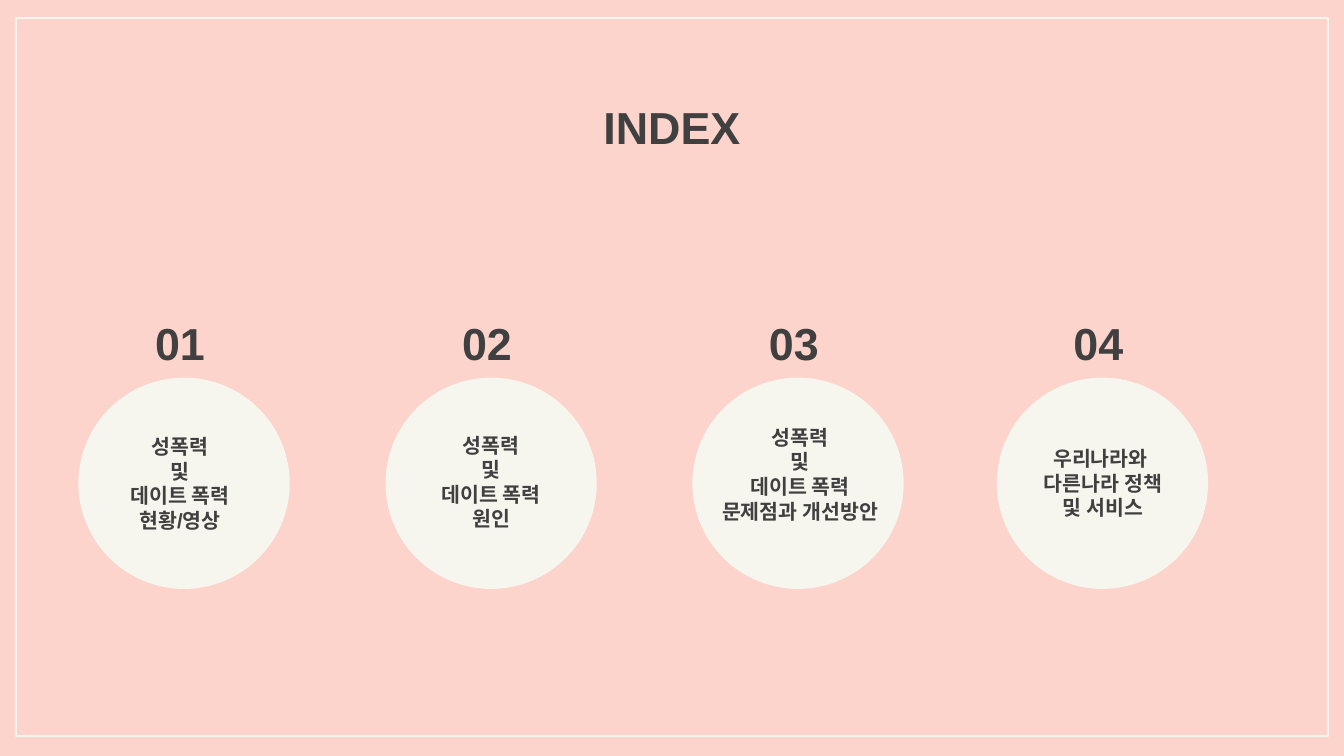
from pptx import Presentation
from pptx.dml.color import RGBColor
from pptx.enum import shapes, text
from pptx.util import Pt

PINK = RGBColor(0xFC, 0xD4, 0xCC)
CREAM = RGBColor(0xF6, 0xF5, 0xEE)
CHARCOAL = RGBColor(0x40, 0x40, 0x40)

CIRCLE_TOP, CIRCLE_SIZE = 202.3, 113.2
NUMBER_TOP, NUMBER_INDENT = 165.6, 34

# Circle left, label box (left, top, width, height), label paragraphs
TOPICS = [
    (42, (59, 229, 75, 62.6), ["성폭력", "및", "데이트 폭력 현황/영상"]),
    (206.5, (224.6, 228.2, 77, 60.5), ["성폭력", "및", "데이트 폭력", "원인"]),
    (370.9, (372.2, 223.9, 113, 60.5),
     ["성폭력", "및", "데이트 폭력", "문제점과 개선방안"]),
    (534, (545.8, 235.4, 90, 47.5), ["우리나라와 ", "다른나라 정책 및 서비스"]),
]


def write(frame, lines, size=11, align=text.PP_ALIGN.CENTER, font="Arial",
          color=CHARCOAL, bold=True):
    """Fill a text frame with one paragraph for each line."""
    for index, line in enumerate(lines):
        para = frame.add_paragraph() if index else frame.paragraphs[0]
        para.alignment = align
        span = para.add_run()
        span.text = line
        span.font.name = font
        span.font.size = Pt(size)
        span.font.bold = bold
        span.font.color.rgb = color


class IndexPage:
    """Holds the style and the slide being built."""

    def __init__(self, deck):
        self.page = deck.slides.add_slide(deck.slide_layouts[6])
        self.page.background.fill.solid()
        self.page.background.fill.fore_color.rgb = PINK

    def frame(self, left, top, width, height):
        box = self.page.shapes.add_shape(
            shapes.MSO_SHAPE.RECTANGLE, Pt(left), Pt(top), Pt(width), Pt(height))
        box.shadow.inherit = False
        box.fill.background()
        box.line.color.rgb = CREAM
        box.line.width = Pt(1)

    def circle(self, left, top, size):
        disc = self.page.shapes.add_shape(
            shapes.MSO_SHAPE.OVAL, Pt(left), Pt(top), Pt(size), Pt(size))
        disc.shadow.inherit = False
        disc.fill.solid()
        disc.fill.fore_color.rgb = CREAM
        disc.line.fill.background()

    def text(self, left, top, width, height, lines, **style):
        box = self.page.shapes.add_textbox(Pt(left), Pt(top), Pt(width), Pt(height))
        box.text_frame.word_wrap = True
        box.text_frame.auto_size = text.MSO_AUTO_SIZE.SHAPE_TO_FIT_TEXT
        write(box.text_frame, lines, **style)


def main():
    deck = Presentation()
    deck.slide_width, deck.slide_height = Pt(720), Pt(405)
    index = IndexPage(deck)
    index.text(274, 50, 172, 36.3, ["INDEX"], size=24)
    index.frame(8.6, 9.8, 703, 384.7)
    for left, _, _ in TOPICS:
        index.circle(left, CIRCLE_TOP, CIRCLE_SIZE)
    for number, (left, _, _) in enumerate(TOPICS, 1):
        index.text(left + NUMBER_INDENT, NUMBER_TOP, 45.4, 36.3,
                   [f"{number:02}"], size=24, align=text.PP_ALIGN.LEFT)
    for _, label_box, lines in TOPICS:
        index.text(*label_box, lines)
    deck.save("out.pptx")


if __name__ == "__main__":
    main()
